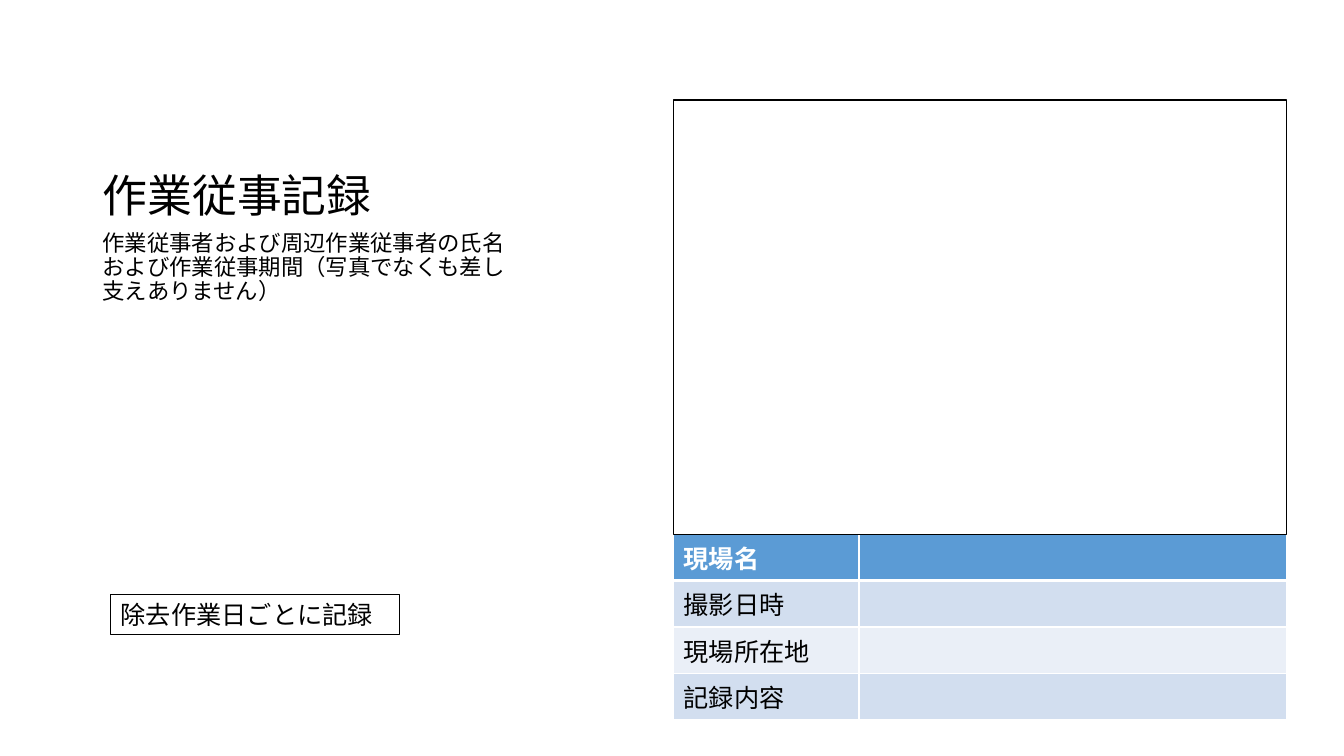
"""Build the work record slide with its photo frame and site table."""
from lxml.etree import SubElement
from pptx import Presentation
from pptx.dml.color import RGBColor
from pptx.enum.shapes import MSO_SHAPE as Shape
from pptx.enum.text import MSO_ANCHOR as Anchor, PP_ALIGN as Align
from pptx.oxml.ns import qn
from pptx.util import Inches, Pt

TITLE = "作業従事記録"
DESCRIPTION = "作業従事者および周辺作業従事者の氏名および作業従事期間（写真でなくも差し支えありません）"
NOTE = "除去作業日ごとに記録"
TABLE_LABELS = ["現場名", "撮影日時", "現場所在地", "記録内容"]

FONT = "Noto Sans CJK JP"
COLORS = {"text": "000000", "white": "FFFFFF", "header": "5B9BD5",
          "band_dark": "D2DEEF", "band_light": "EAEFF7"}

SLIDE_WIDTH, SLIDE_HEIGHT = 13.33, 7.5
TEXT_LEFT, TEXT_WIDTH = 0.92, 4.3
TEXT_SPLIT = SLIDE_HEIGHT * 0.3
PHOTO_LEFT, PHOTO_TOP, PHOTO_HEIGHT = 6.68, 0.99, 4.31
COLUMN_WIDTHS = [1.84, 4.24]
ROW_HEIGHT = 0.46
NOTE_BOX = (1.1, 5.9, 2.86, 0.4)


def color(name):
    return RGBColor.from_string(COLORS[name])


def write(frame, text, size=18, ink="text", bold=False, anchor=None, spacing=None):
    frame.word_wrap = True
    if anchor is not None:
        frame.vertical_anchor = anchor
    paragraph = frame.paragraphs[0]
    paragraph.alignment = Align.LEFT
    if spacing:
        paragraph.line_spacing = spacing
    run = paragraph.add_run()
    run.text = text
    font = run.font
    font.size, font.bold, font.name = Pt(size), bold, FONT
    font.color.rgb = color(ink)
    SubElement(run._r.get_or_add_rPr(), qn("a:ea"), typeface=FONT)


def add_text(slide, text, top, height, **style):
    box = slide.shapes.add_textbox(
        *map(Inches, (TEXT_LEFT, top, TEXT_WIDTH, height)))
    write(box.text_frame, text, spacing=0.9, **style)


def add_frame(slide, bounds, line_width):
    shape = slide.shapes.add_shape(Shape.RECTANGLE, *map(Inches, bounds))
    shape.shadow.inherit = False
    shape.fill.background()
    shape.line.color.rgb = color("text")
    shape.line.width = Pt(line_width)
    return shape


def add_borders(cell, widths):
    properties = cell._tc.get_or_add_tcPr()
    for side, width in widths.items():
        line = SubElement(properties, qn(f"a:ln{side}"), w=str(Pt(width)))
        fill = SubElement(line, qn("a:solidFill"))
        SubElement(fill, qn("a:srgbClr"), val=COLORS["white"])


def add_site_table(slide):
    count = len(TABLE_LABELS)
    table = slide.shapes.add_table(
        count, len(COLUMN_WIDTHS), Inches(PHOTO_LEFT),
        Inches(PHOTO_TOP + PHOTO_HEIGHT), Inches(sum(COLUMN_WIDTHS)),
        Inches(ROW_HEIGHT * count)).table
    for column, width in zip(table.columns, COLUMN_WIDTHS):
        column.width = Inches(width)
    for index, label in enumerate(TABLE_LABELS):
        is_header = index == 0
        band = "header" if is_header else ("band_light", "band_dark")[index % 2]
        row = table.rows[index]
        row.height = Inches(ROW_HEIGHT)
        for cell in row.cells:
            add_borders(cell, {"L": 1, "R": 1, "T": 3 if index == 1 else 1,
                               "B": 3 if is_header else 1})
            cell.fill.solid()
            cell.fill.fore_color.rgb = color(band)
        write(row.cells[0].text_frame, label, bold=is_header,
              ink="white" if is_header else "text")


def main():
    presentation = Presentation()
    presentation.slide_width = Inches(SLIDE_WIDTH)
    presentation.slide_height = Inches(SLIDE_HEIGHT)
    slide = presentation.slides.add_slide(presentation.slide_layouts[6])
    add_text(slide, TITLE, 0.5, TEXT_SPLIT - 0.5, size=32, anchor=Anchor.BOTTOM)
    add_text(slide, DESCRIPTION, TEXT_SPLIT, 4.17, size=16, anchor=Anchor.TOP)
    add_site_table(slide)
    add_frame(slide, (PHOTO_LEFT, PHOTO_TOP, sum(COLUMN_WIDTHS), PHOTO_HEIGHT), 1)
    note = add_frame(slide, NOTE_BOX, 0.75)
    write(note.text_frame, NOTE, anchor=Anchor.TOP)
    presentation.save("out.pptx")


if __name__ == "__main__":
    main()
